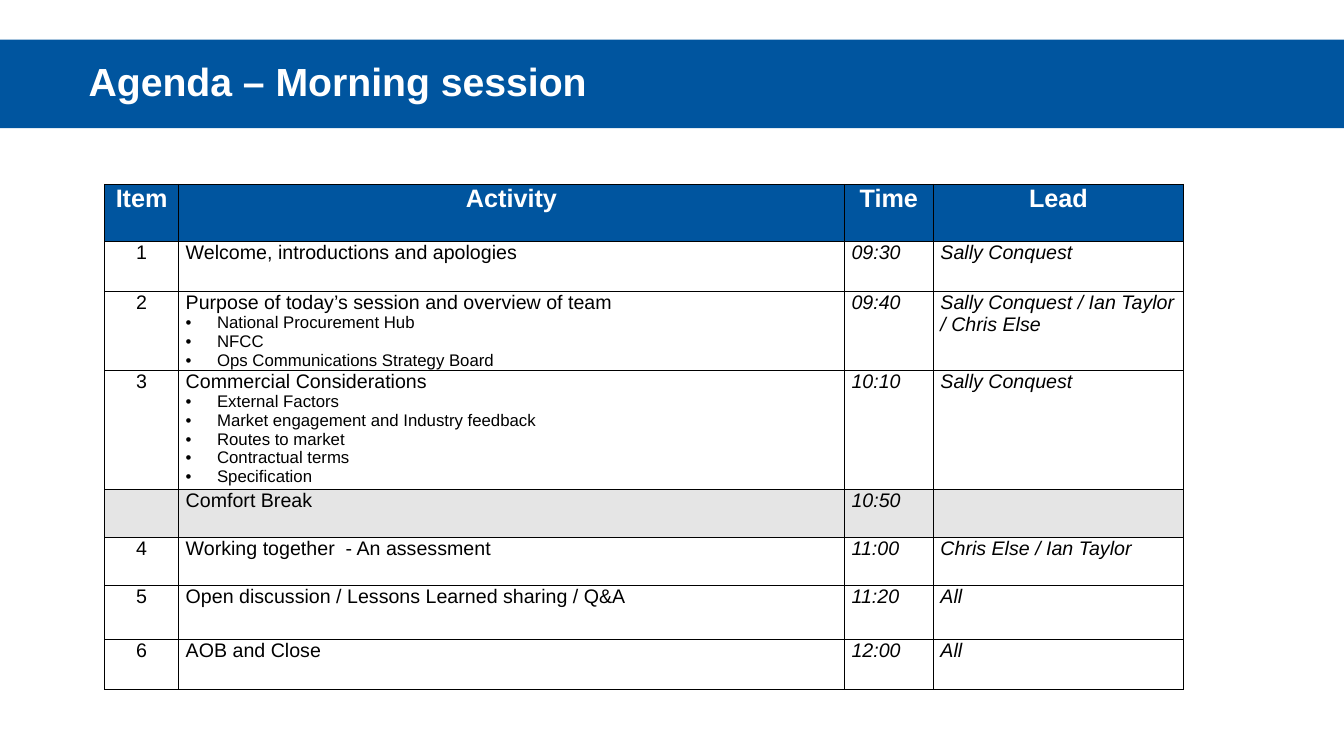
from dataclasses import dataclass

from lxml.etree import SubElement
from pptx import Presentation
from pptx.dml.color import RGBColor
from pptx.enum.text import MSO_ANCHOR as Anchor, PP_ALIGN as Align
from pptx.oxml import parse_xml
from pptx.oxml.ns import nsdecls, qn
from pptx.util import Cm, Pt

COLORS = {"blue": "00559F", "grey": "E5E5E5", "white": "FFFFFF", "black": "000000"}
COL_WIDTHS = (1.86, 16.78, 2.24, 6.31)
HEADINGS = ("Item", "Activity", "Time", "Lead")
HEADER_HEIGHT = 1.43


@dataclass(frozen=True)
class Session:
    item: str
    activity: str
    time: str
    lead: str
    height: float
    topics: tuple[str, ...] = ()
    fill: str | None = None


SESSIONS = (
    Session("1", "Welcome, introductions and apologies", "09:30", "Sally Conquest", 1.27),
    Session("2", "Purpose of today’s session and overview of team", "09:40",
            "Sally Conquest / Ian Taylor / Chris Else", 1.97,
            ("National Procurement Hub", "NFCC", "Ops Communications Strategy Board")),
    Session("3", "Commercial Considerations", "10:10", "Sally Conquest", 3.01,
            ("External Factors", "Market engagement and Industry feedback",
             "Routes to market", "Contractual terms", "Specification")),
    Session("", "Comfort Break", "10:50", "", 1.2, fill="grey"),
    Session("4", "Working together  - An assessment", "11:00", "Chris Else / Ian Taylor", 1.21),
    Session("5", "Open discussion / Lessons Learned sharing / Q&A", "11:20", "All", 1.36),
    Session("6", "AOB and Close", "12:00", "All", 1.26),
)


def rgb(name: str) -> RGBColor:
    return RGBColor.from_string(COLORS[name])


def add_run(p, text: str, size: float, color: str = "black",
            bold: bool = False, italic: bool = False) -> None:
    r = p.add_run()
    r.text = text
    r.font.name = "Arial"
    r.font.size = Pt(size)
    r.font.bold = bold
    r.font.italic = italic
    r.font.color.rgb = rgb(color)


def set_indent(p, left: float, first: float = 0):
    pPr = p._p.get_or_add_pPr()
    pPr.set("marL", str(Cm(left)))
    pPr.set("indent", str(Cm(first)))
    return pPr


def format_cell(cell, fill: str | None) -> None:
    cell.margin_left = cell.margin_right = Cm(0.18)
    cell.margin_top = cell.margin_bottom = 0
    tcPr = cell._tc.get_or_add_tcPr()
    for side in "LRTB":
        tcPr.append(parse_xml(
            f'<a:ln{side} {nsdecls("a")} w="{Pt(1)}"><a:solidFill>'
            f'<a:srgbClr val="{COLORS["black"]}"/></a:solidFill></a:ln{side}>'))
    if fill:
        cell.fill.solid()
        cell.fill.fore_color.rgb = rgb(fill)
    else:
        cell.fill.background()


def add_topics(tf, topics: tuple[str, ...]) -> None:
    for topic in topics:
        p = tf.add_paragraph()
        pPr = set_indent(p, 0.79, -0.79)
        SubElement(pPr, qn("a:buFont"), typeface="Arial")
        SubElement(pPr, qn("a:buChar"), char="•")
        add_run(p, topic, 12)


def add_title(s) -> None:
    title = s.shapes.title
    title.left, title.top, title.width, title.height = 0, Cm(1), Cm(33.87), Cm(2.23)
    title.fill.solid()
    title.fill.fore_color.rgb = rgb("blue")
    tf = title.text_frame
    tf.vertical_anchor = Anchor.MIDDLE
    p = tf.paragraphs[0]
    p.alignment = Align.LEFT
    p.line_spacing = 0.9
    set_indent(p, 1.98)
    add_run(p, "Agenda – Morning session", 28, "white", bold=True)


def add_agenda(s) -> None:
    heights = (HEADER_HEIGHT, *(session.height for session in SESSIONS))
    table = s.shapes.add_table(len(heights), len(COL_WIDTHS), Cm(2.64), Cm(4.65),
                               Cm(sum(COL_WIDTHS)), Cm(sum(heights))).table
    table.first_row = True
    table.horz_banding = False
    for column, width in zip(table.columns, COL_WIDTHS):
        column.width = Cm(width)
    for row, height in zip(table.rows, heights):
        row.height = Cm(height)

    for col, heading in enumerate(HEADINGS):
        cell = table.cell(0, col)
        format_cell(cell, "blue")
        p = cell.text_frame.paragraphs[0]
        p.alignment = Align.CENTER
        add_run(p, heading, 18, "white", bold=True)

    for row, session in enumerate(SESSIONS, 1):
        texts = (session.item, session.activity, session.time, session.lead)
        for col, text in enumerate(texts):
            cell = table.cell(row, col)
            format_cell(cell, session.fill)
            p = cell.text_frame.paragraphs[0]
            p.alignment = Align.LEFT if col else Align.CENTER
            if text:
                add_run(p, text, 14, italic=col > 1)
        add_topics(table.cell(row, 1).text_frame, session.topics)


def main() -> None:
    prs = Presentation()
    prs.slide_width, prs.slide_height = Cm(33.87), Cm(19.05)
    s = prs.slides.add_slide(prs.slide_layouts[5])
    add_title(s)
    add_agenda(s)
    prs.save("out.pptx")


if __name__ == "__main__":
    main()
